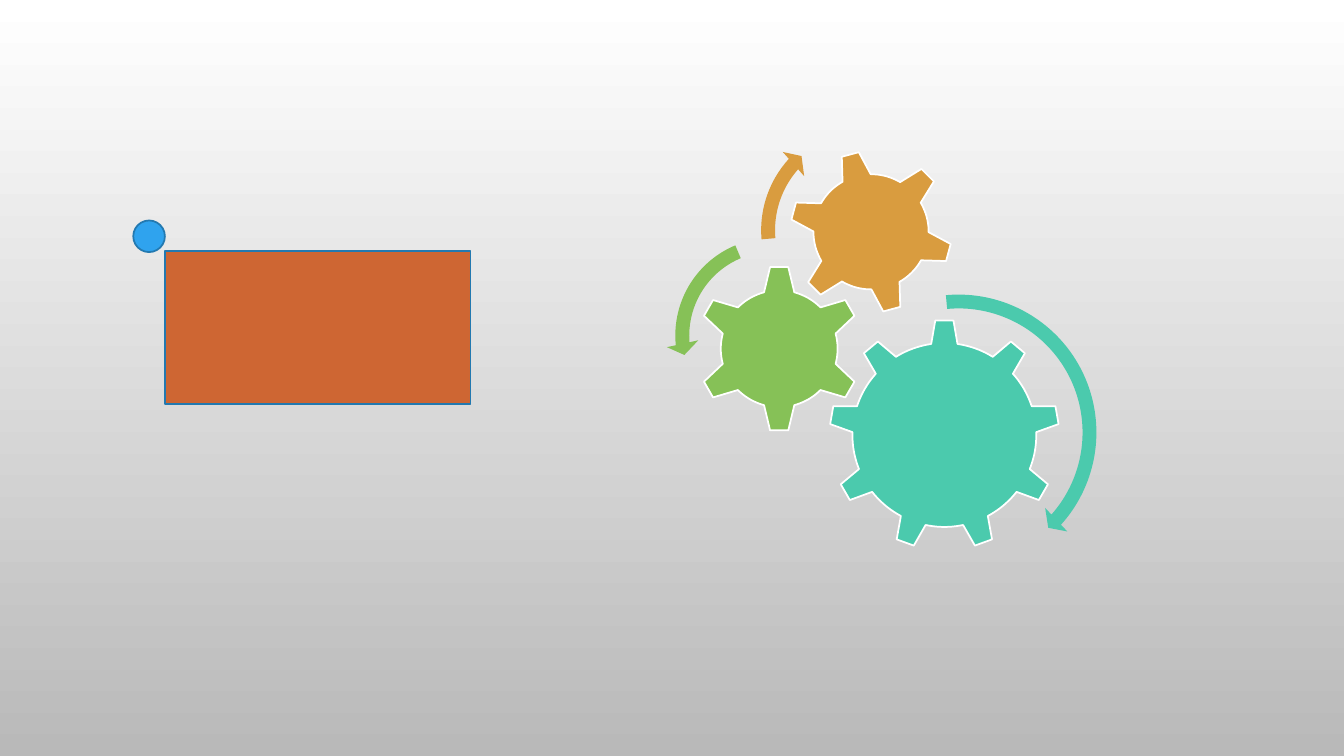
"""Build a slide with a marked block beside three turning gears."""
from math import atan2, cos, hypot, pi, radians, sin

from pptx import Presentation
from pptx.dml.color import RGBColor
from pptx.enum.shapes import MSO_SHAPE
from pptx.util import Pt

THEME = {
    "top": "FFFFFF", "bottom": "B9B9B9", "white": "FFFFFF",
    "blue": "2FA3EE", "outline": "2379B0", "rust": "CE6633",
    "teal": "4BCAAD", "green": "86C157", "orange": "D99C3F",
    "line_width": 1.25,
}
ARC_STEPS = 10


def paint(shape, fill, line=None):
    """Give a shape a flat fill and an optional outline."""
    shape.shadow.inherit = False
    shape.fill.solid()
    shape.fill.fore_color.rgb = RGBColor.from_string(THEME[fill])
    if line:
        shape.line.color.rgb = RGBColor.from_string(THEME[line])
        shape.line.width = Pt(THEME["line_width"])
    else:
        shape.line.fill.background()


def gear_points(center, teeth, turn, tip, root):
    """Trace a gear; tip and root are (distance, half width) of a tooth."""
    points = []
    radius, root_angle = hypot(*root), atan2(root[1], root[0])
    gap = 2 * pi / teeth - 2 * root_angle
    for tooth in range(teeth):
        middle = radians(turn) + tooth * 2 * pi / teeth
        polar = [(hypot(*tip), middle + side * atan2(tip[1], tip[0])) for side in (-1, 1)]
        polar += [(radius, middle + root_angle + gap * step / ARC_STEPS)
                  for step in range(ARC_STEPS + 1)]
        points += [(Pt(center[0] + reach * cos(angle)), Pt(center[1] + reach * sin(angle)))
                   for reach, angle in polar]
    return points


deck = Presentation()
deck.slide_width, deck.slide_height = Pt(960), Pt(540)
page = deck.slides.add_slide(deck.slide_layouts[6])

backdrop = page.background.fill
backdrop.gradient()
backdrop.gradient_angle = 270
for stop, name in zip(backdrop.gradient_stops, ("top", "bottom")):
    stop.color.rgb = RGBColor.from_string(THEME[name])

for kind, place, fill in (
    (MSO_SHAPE.OVAL, (95.2, 157.5, 22.6, 22.6), "blue"),
    (MSO_SHAPE.RECTANGLE, (118, 179.3, 218.2, 109.4), "rust"),
):
    paint(page.shapes.add_shape(kind, *map(Pt, place)), fill, "outline")

gears = (
    ("teal", (674.6, 310.7), 9, -90, (81.7, 6.5), (65, 9.4)),
    ("green", (556.6, 249.1), 6, -90, (58.3, 6.5), (40.3, 10.8)),
    ("orange", (622.2, 165.6), 6, 15, (57.2, 6.3), (39.8, 10.4)),
)
for fill, *measures in gears:
    outline = gear_points(*measures)
    builder = page.shapes.build_freeform(*outline[0])
    builder.add_line_segments(outline[1:], close=True)
    paint(builder.convert_to_shape(), fill, "white")

arrows = (
    ("teal", MSO_SHAPE.CIRCULAR_ARROW, (579.6, 203.8, 210.2),
     (0.047, 2.99, 25.058, 158.838, 0.055)),
    ("green", MSO_SHAPE.LEFT_CIRCULAR_ARROW, (475.9, 163.4, 152.6),
     (0.065, 4.3, 104.891, 148.378, 0.075)),
    ("orange", MSO_SHAPE.CIRCULAR_ARROW, (537.1, 82.1, 164.9),
     (0.06, 3.941, 133.138, 105.082, 0.07)),
)
for fill, kind, (left, top, size), settings in arrows:
    arrow = page.shapes.add_shape(kind, Pt(left), Pt(top), Pt(size), Pt(size))
    for index, setting in enumerate(settings):
        arrow.adjustments[index] = setting
    paint(arrow, fill)

deck.save("out.pptx")
